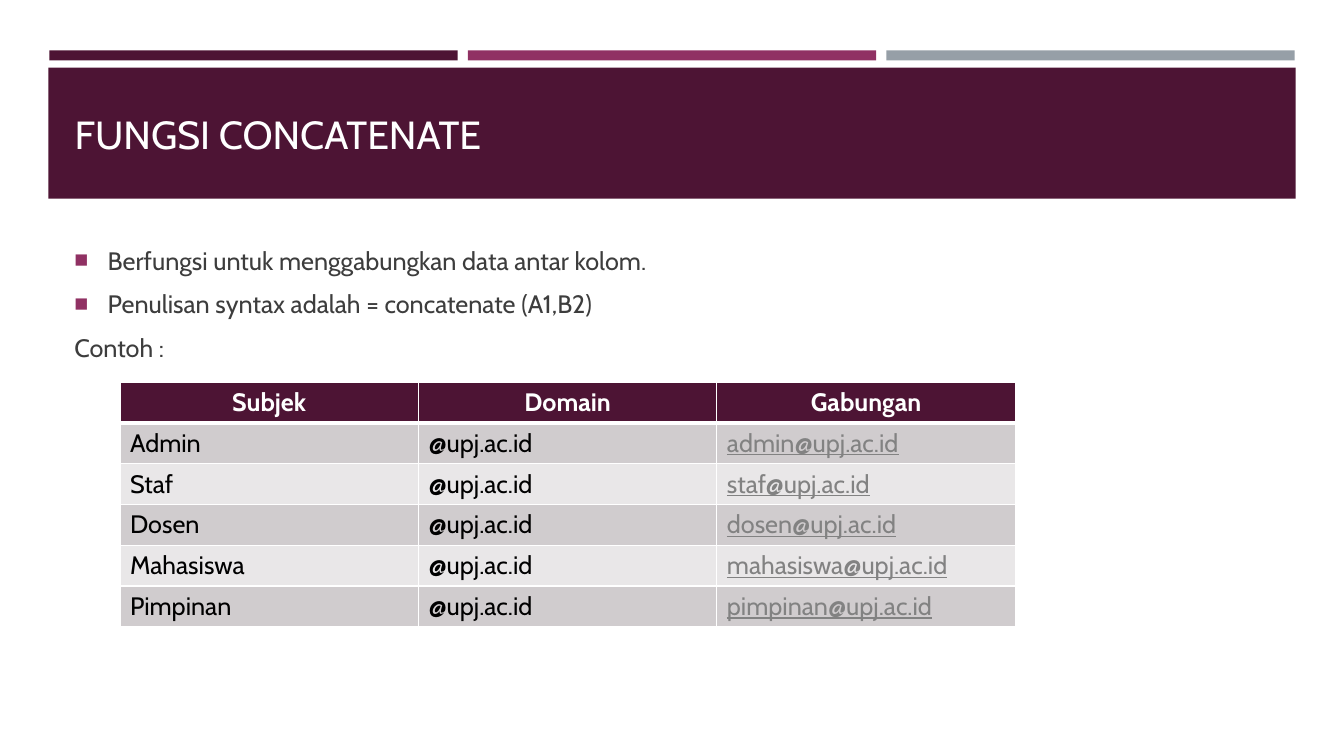
"""Build the slide that explains the CONCATENATE function."""
from lxml import etree
from pptx import Presentation
from pptx.dml.color import RGBColor
from pptx.enum.shapes import MSO_SHAPE
from pptx.enum.text import MSO_ANCHOR, PP_ALIGN
from pptx.oxml.ns import qn
from pptx.util import Inches, Pt

RECTANGLE = MSO_SHAPE.RECTANGLE
TOP, MIDDLE = MSO_ANCHOR.TOP, MSO_ANCHOR.MIDDLE
LEFT, CENTER = PP_ALIGN.LEFT, PP_ALIGN.CENTER

FONT = "Cabin"
COLORS = {
    "plum": "4D1434", "magenta": "903163", "steel": "969FA7",
    "white": "FFFFFF", "body": "3D3D3D", "black": "000000", "link": "828282",
    "odd_row": "D0CCCE", "even_row": "E9E7E8",
}

HEADING = "FUNGSI CONCATENATE"
POINTS = [
    ("Berfungsi untuk menggabungkan data antar kolom.", True),
    ("Penulisan syntax adalah = concatenate (A1,B2)", True),
    ("Contoh :", False),
]
HEADERS = ("Subjek", "Domain", "Gabungan")
DOMAIN = "@upj.ac.id"
SUBJECTS = ["Admin", "Staf", "Dosen", "Mahasiswa", "Pimpinan"]
ROWS = [HEADERS] + [(name, DOMAIN, name.lower() + DOMAIN) for name in SUBJECTS]

SLIDE_W, SLIDE_H = 13.33, 7.5
STRIPES = ["plum", "magenta", "steel"]
STRIPE_LEFT, STRIPE_TOP, STRIPE_W, STRIPE_H, STRIPE_PITCH = 0.49, 0.5, 4.05, 0.1, 4.15
BAND = (0.48, 0.67, 12.37, 1.3)
HEADING_BOX = (0.64, 0.77, 12.06, 1.11)
POINTS_BOX = (0.64, 2.38, 12.06, 4.02)
TABLE_LEFT, TABLE_TOP, COLUMN_W, ROW_H = 1.19, 3.79, 2.96, 0.405
BULLET_INDENT = 0.33


def rgb(name):
    return RGBColor.from_string(COLORS[name])


def inches(box):
    return [Inches(length) for length in box]


def add_run(paragraph, text, size, color, bold=False, underline=False):
    run = paragraph.add_run()
    run.text = text
    font = run.font
    font.name, font.size, font.bold, font.underline = FONT, Pt(size), bold, underline
    font.color.rgb = rgb(color)


def add_block(slide, box, color):
    block = slide.shapes.add_shape(RECTANGLE, *inches(box))
    block.shadow.inherit = False
    block.fill.solid()
    block.fill.fore_color.rgb = rgb(color)
    block.line.fill.background()


def add_bullet(paragraph):
    properties = paragraph._p.get_or_add_pPr()
    properties.set("marL", str(Inches(BULLET_INDENT)))
    properties.set("indent", str(-Inches(BULLET_INDENT)))
    color = etree.SubElement(properties, qn("a:buClr"))
    etree.SubElement(color, qn("a:srgbClr"), val=COLORS["magenta"])
    etree.SubElement(properties, qn("a:buSzPct"), val="92000")
    etree.SubElement(properties, qn("a:buFont"), typeface="Arial")
    etree.SubElement(properties, qn("a:buChar"), char="■")


def add_borders(cell, widths):
    properties = cell._tc.get_or_add_tcPr()
    for side, width in widths.items():
        line = etree.SubElement(properties, qn("a:ln" + side), w=str(Pt(width)))
        fill = etree.SubElement(line, qn("a:solidFill"))
        etree.SubElement(fill, qn("a:srgbClr"), val=COLORS["white"])


def add_heading(slide):
    for index, color in enumerate(STRIPES):
        left = STRIPE_LEFT + index * STRIPE_PITCH
        add_block(slide, (left, STRIPE_TOP, STRIPE_W, STRIPE_H), color)
    add_block(slide, BAND, "plum")
    heading = slide.shapes.title
    slide.shapes._spTree.append(heading._element)
    heading.left, heading.top, heading.width, heading.height = inches(HEADING_BOX)
    heading.text_frame.vertical_anchor = MIDDLE
    paragraph = heading.text_frame.paragraphs[0]
    paragraph.alignment = LEFT
    add_run(paragraph, HEADING, 28, "white")


def add_points(slide):
    frame = slide.shapes.add_textbox(*inches(POINTS_BOX)).text_frame
    frame.word_wrap = True
    frame.vertical_anchor = TOP
    for index, (text, bulleted) in enumerate(POINTS):
        paragraph = frame.add_paragraph() if index else frame.paragraphs[0]
        if bulleted:
            add_bullet(paragraph)
        paragraph.space_before = Pt(3.6 if index else 0)
        paragraph.space_after = Pt(6)
        add_run(paragraph, text, 18, "body")


def add_example(slide):
    size = (COLUMN_W * len(HEADERS), ROW_H * len(ROWS))
    example = slide.shapes.add_table(
        len(ROWS), len(HEADERS), *inches((TABLE_LEFT, TABLE_TOP, *size))).table
    example.horz_banding = False
    for r, row in enumerate(ROWS):
        is_header = r == 0
        fill = "plum" if is_header else "odd_row" if r % 2 else "even_row"
        borders = {"L": 1, "R": 1, "T": 3 if r == 1 else 1, "B": 3 if is_header else 1}
        for c, text in enumerate(row):
            cell = example.cell(r, c)
            add_borders(cell, borders)
            cell.fill.solid()
            cell.fill.fore_color.rgb = rgb(fill)
            is_address = c == 2 and not is_header
            color = "white" if is_header else "link" if is_address else "black"
            paragraph = cell.text_frame.paragraphs[0]
            paragraph.alignment = CENTER if is_header else LEFT
            add_run(paragraph, text, 18, color, is_header, is_address)


def main():
    deck = Presentation()
    deck.slide_width, deck.slide_height = Inches(SLIDE_W), Inches(SLIDE_H)
    slide = deck.slides.add_slide(deck.slide_layouts[5])
    add_heading(slide)
    add_points(slide)
    add_example(slide)
    deck.save("out.pptx")


if __name__ == "__main__":
    main()
